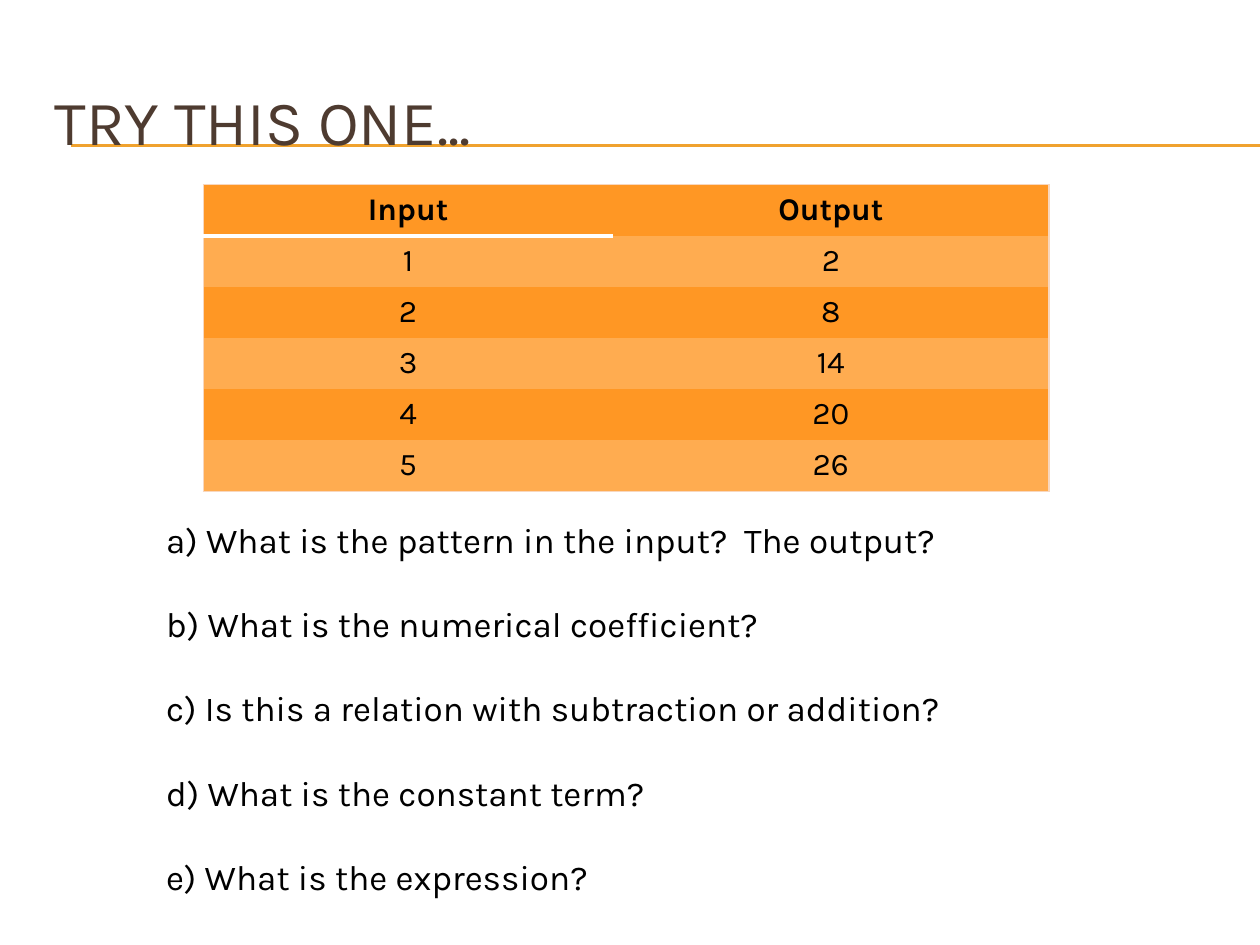
"""Build the "Try this one" slide with an input-output table and questions."""
from lxml import etree
from pptx import Presentation
from pptx import util as u
from pptx.dml.color import RGBColor
from pptx.enum import shapes, text
from pptx.oxml import ns

COLORS = {"title": "4E3B30", "rule": "F0A22E", "text": "000000", "dark": "FF9724",
          "light": "FFAC50", "edge": "F8D7BE", "white": "FFFFFF"}
NO_STYLE = "{2D5ABB26-0587-4C30-8999-92F81FD0307C}"
ROWS = [("Input", "Output"), ("1", "2"), ("2", "8"), ("3", "14"), ("4", "20"), ("5", "26")]
QUESTIONS = ["a) What is the pattern in the input?  The output?",
             "b) What is the numerical coefficient?",
             "c) Is this a relation with subtraction or addition?",
             "d) What is the constant term?",
             "e) What is the expression?"]


def set_font(paragraph, size, color, bold=False):
    font = paragraph.font
    font.name, font.size, font.bold = "Karla", u.Pt(size), bold
    font.color.rgb = RGBColor.from_string(COLORS[color])


def set_borders(cell, borders):
    properties = cell._tc.get_or_add_tcPr()
    for index, (side, color, width) in enumerate(borders):
        line = etree.Element(ns.qn("a:ln" + side), w=str(u.Pt(width)))
        fill = etree.SubElement(line, ns.qn("a:solidFill"))
        etree.SubElement(fill, ns.qn("a:srgbClr"), val=COLORS[color])
        properties.insert(index, line)


presentation = Presentation()
presentation.slide_width, presentation.slide_height = u.Pt(720), u.Pt(540)
slide = presentation.slides.add_slide(presentation.slide_layouts[5])

for index, top in enumerate((82.8, 83.5)):
    rule = slide.shapes.add_connector(
        shapes.MSO_CONNECTOR.STRAIGHT, u.Pt(40.5), u.Pt(top), u.Pt(720), u.Pt(top))
    rule.line.color.rgb = RGBColor.from_string(COLORS["rule"])
    rule.line.width = u.Pt(0.75)
    etree.SubElement(rule._element.spPr, ns.qn("a:effectLst"))
    slide.shapes._spTree.insert(2 + index, rule._element)

title = slide.shapes.title
title.left, title.top, title.width, title.height = u.Pt(24), u.Pt(36), u.Pt(684), u.Pt(66)
title.text_frame.text = "TRY THIS ONE..."
title.text_frame.vertical_anchor = text.MSO_ANCHOR.MIDDLE
title.text_frame.paragraphs[0].alignment = text.PP_ALIGN.LEFT
set_font(title.text_frame.paragraphs[0], 36, "title")

frame = slide.shapes.add_table(
    len(ROWS), 2, u.Pt(116.2), u.Pt(105.6), u.Pt(483.2), u.Pt(175.2))
table = frame.table
table.first_row = table.horz_banding = False
table._tbl.tblPr.find(ns.qn("a:tableStyleId")).text = NO_STYLE
table.columns[0].width, table.columns[1].width = u.Pt(234), u.Pt(249.2)
for row, values in enumerate(ROWS):
    table.rows[row].height = u.Pt(29.2)
    for column, value in enumerate(values):
        cell = table.cell(row, column)
        cell.text = value
        cell.fill.solid()
        cell.fill.fore_color.rgb = RGBColor.from_string(COLORS["light" if row % 2 else "dark"])
        paragraph = cell.text_frame.paragraphs[0]
        paragraph.alignment = text.PP_ALIGN.CENTER
        set_font(paragraph, 18, "text", bold=row == 0)
        borders = [("R" if column else "L", "edge", 0.79)]
        if row == 0:
            borders.append(("T", "edge", 0.79))
            if column == 0:
                borders.append(("B", "white", 3))
        elif row == len(ROWS) - 1:
            borders.append(("B", "edge", 0.79))
        set_borders(cell, borders)

questions = slide.shapes.add_textbox(u.Pt(87.8), u.Pt(293), u.Pt(572.4), u.Pt(247))
questions.text_frame.word_wrap = True
questions.text_frame.text = "\n".join(QUESTIONS)
for paragraph in questions.text_frame.paragraphs:
    set_font(paragraph, 20, "text")
    paragraph.space_after = u.Pt(24)

presentation.save("out.pptx")
